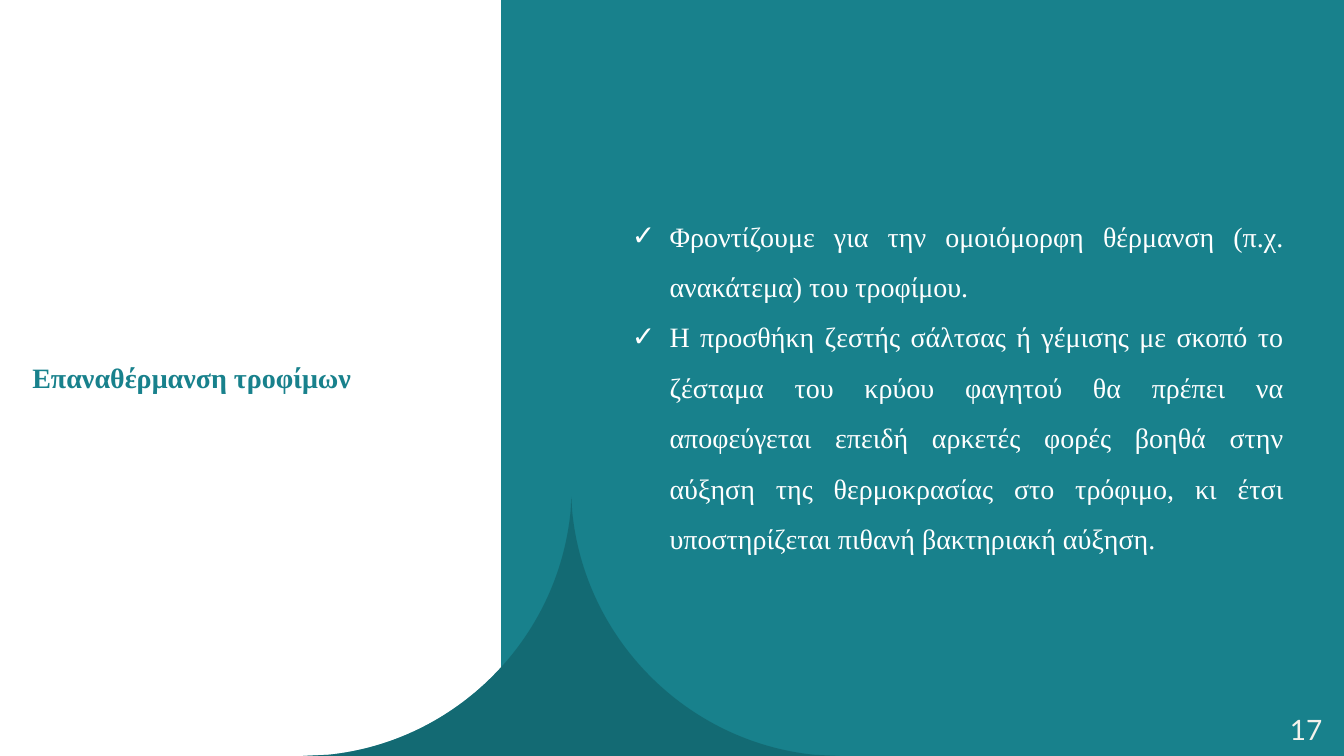
"""Build the slide on reheating food."""
from dataclasses import dataclass
from typing import Optional

from lxml import etree
from pptx import Presentation
from pptx.dml.color import RGBColor
from pptx.enum.shapes import MSO_SHAPE
from pptx.enum.text import MSO_ANCHOR, MSO_AUTO_SIZE, PP_ALIGN
from pptx.oxml.ns import qn
from pptx.shapes.base import BaseShape
from pptx.slide import Slide
from pptx.util import Cm, Pt

RECTANGLE = MSO_SHAPE.RECTANGLE
TOP, MIDDLE = MSO_ANCHOR.TOP, MSO_ANCHOR.MIDDLE
LEFT, RIGHT, JUSTIFY = PP_ALIGN.LEFT, PP_ALIGN.RIGHT, PP_ALIGN.JUSTIFY
NO_AUTOFIT = MSO_AUTO_SIZE.NONE
FIT_SHAPE = MSO_AUTO_SIZE.SHAPE_TO_FIT_TEXT

WHITE = RGBColor(0xFF, 0xFF, 0xFF)
TEAL = RGBColor(0x18, 0x81, 0x8C)
DARK_TEAL = RGBColor(0x12, 0x61, 0x69)
CREAM = RGBColor(0xF4, 0xF2, 0xEC)

SLIDE_WIDTH, SLIDE_HEIGHT = 33.87, 19.05
BULLET_INDENT = Cm(0.95)
FLARE_CENTRE, FLARE_TIP = 14.4, 12.52
FLARE_SIDE = [(6.76, SLIDE_HEIGHT), (6.12, 19.02), (2.9, 18.69), (0.33, 16.1), (0.02, 12.88)]
CURVE_STARTS = (1, 6)

TITLE = "Επαναθέρμανση τροφίμων"
ADVICE = [
    "Φροντίζουμε για την ομοιόμορφη θέρμανση (π.χ. ανακάτεμα) του τροφίμου. ",
    "Η προσθήκη ζεστής σάλτσας ή γέμισης με σκοπό το ζέσταμα του κρύου φαγητού "
    "θα πρέπει να αποφεύγεται επειδή αρκετές φορές βοηθά στην αύξηση της "
    "θερμοκρασίας στο τρόφιμο, κι έτσι υποστηρίζεται πιθανή βακτηριακή αύξηση.",
]


@dataclass(frozen=True)
class Panel:
    """A plain rectangle reaching the right edge of the slide."""
    left: float
    color: RGBColor


@dataclass(frozen=True)
class Flare:
    """A fill for the curved spike at the foot of the slide."""
    color: RGBColor
    opacity: Optional[int] = None


PANELS = (Panel(0, WHITE), Panel(12.63, TEAL))
FLARES = (Flare(TEAL), Flare(DARK_TEAL, 70))


def paint(shape: BaseShape, color: RGBColor, opacity: Optional[int] = None) -> None:
    """Give a shape a flat fill without line or shadow."""
    shape.shadow.inherit = False
    shape.line.fill.background()
    shape.fill.solid()
    shape.fill.fore_color.rgb = color
    if opacity is not None:
        color_element = shape.element.spPr.find(qn("a:solidFill"))[0]
        etree.SubElement(color_element, qn("a:alpha"), val=str(opacity * 1000))


def add_panel(slide: Slide, panel: Panel) -> None:
    """Draw one full-height panel."""
    shape = slide.shapes.add_shape(RECTANGLE, Cm(panel.left), 0,
                                   Cm(SLIDE_WIDTH - panel.left), Cm(SLIDE_HEIGHT))
    paint(shape, panel.color)


def bend(shape: BaseShape, start: int) -> None:
    """Turn three successive line segments into one cubic curve."""
    segments = list(shape.element.iter(qn("a:lnTo"), qn("a:cubicBezTo")))
    lines = [segment for segment in segments if segment.tag == qn("a:lnTo")]
    first, second, third = lines[start:start + 3]
    curve = etree.Element(qn("a:cubicBezTo"))
    first.addprevious(curve)
    for line in (first, second, third):
        curve.append(line[0])
        line.getparent().remove(line)


def add_flare(slide: Slide, flare: Flare) -> None:
    """Draw the symmetric spike from one side and its mirror."""
    outline = [(-x, y) for x, y in FLARE_SIDE] + [(0, FLARE_TIP)] + FLARE_SIDE[::-1]
    points = [(Cm(FLARE_CENTRE + x), Cm(y)) for x, y in outline]
    builder = slide.shapes.build_freeform(*points[0])
    builder.add_line_segments(points[1:], close=True)
    shape = builder.convert_to_shape()
    for start in reversed(CURVE_STARTS):
        bend(shape, start)
    paint(shape, flare.color, flare.opacity)


def place(shape: BaseShape, left: float, top: float, width: float, height: float) -> None:
    """Position a placeholder and bring it to the front."""
    shape.left, shape.top, shape.width, shape.height = map(Cm, (left, top, width, height))
    shape.element.getparent().append(shape.element)


def write_text(shape: BaseShape, lines: list[str], *, color: RGBColor,
               font: str = "Times New Roman", size: int = 20, bold: bool = False,
               align: PP_ALIGN = LEFT, anchor: MSO_ANCHOR = TOP, wrap: bool = True,
               auto_size: MSO_AUTO_SIZE = FIT_SHAPE, line_spacing: float = 1.0,
               bullet: Optional[str] = None) -> None:
    """Fill a shape with formatted paragraphs."""
    frame = shape.text_frame
    frame.word_wrap = wrap
    frame.auto_size = auto_size
    frame.vertical_anchor = anchor
    frame.text = "\n".join(lines)
    for paragraph in frame.paragraphs:
        paragraph.alignment = align
        paragraph.line_spacing = line_spacing
        paragraph.space_before = Pt(0)
        text_font = paragraph.runs[0].font
        text_font.name, text_font.size, text_font.bold = font, Pt(size), bold
        text_font.color.rgb = color
        if bullet:
            properties = paragraph._p.get_or_add_pPr()
            properties.set("marL", str(BULLET_INDENT))
            properties.set("indent", str(-BULLET_INDENT))
            etree.SubElement(properties, qn("a:buChar"), char=bullet)


def main() -> None:
    """Assemble and save the presentation."""
    presentation = Presentation()
    presentation.slide_width, presentation.slide_height = Cm(SLIDE_WIDTH), Cm(SLIDE_HEIGHT)
    slide = presentation.slides.add_slide(presentation.slide_layouts[1])
    for panel in PANELS:
        add_panel(slide, panel)
    for flare in FLARES:
        add_flare(slide, flare)

    number = slide.shapes.add_textbox(Cm(31.65), Cm(17.88), Cm(1.93), Cm(1.02))
    write_text(number, ["17"], color=CREAM, font="Lato", align=RIGHT,
               anchor=MIDDLE, auto_size=NO_AUTOFIT)

    title, body = slide.shapes.title, slide.placeholders[1]
    place(title, 0.56, 8.95, 8.61, 1.12)
    write_text(title, [TITLE], color=TEAL, bold=True, wrap=False)
    place(body, 15.67, 4.97, 16.94, 9.07)
    write_text(body, ADVICE, color=WHITE, align=JUSTIFY, line_spacing=1.5, bullet="✓")
    presentation.save("out.pptx")


if __name__ == "__main__":
    main()
